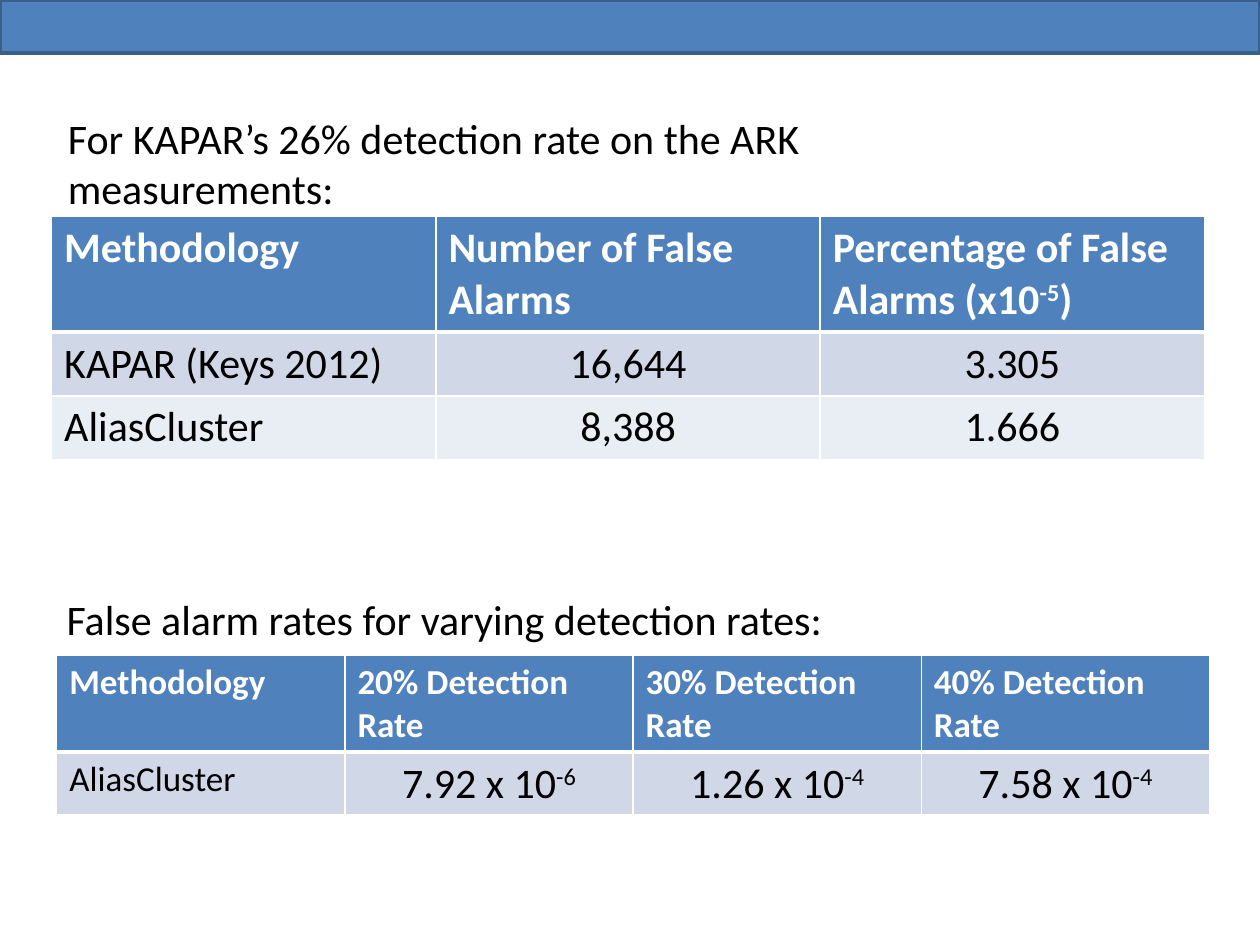
from lxml.etree import SubElement
from pptx import Presentation
from pptx.dml.color import RGBColor
from pptx.enum.shapes import MSO_SHAPE
from pptx.enum.text import PP_ALIGN
from pptx.oxml.ns import qn
from pptx.util import Inches, Pt

BLUE, EDGE, WHITE, BLACK = "4F81BD", "3A5F8C", "FFFFFF", "000000"
BANDS = ("D0D8E8", "E9EDF4")


def color(value):
    return RGBColor.from_string(value)


def fill_solid(fill, value):
    fill.solid()
    fill.fore_color.rgb = color(value)


def write(p, text, size, value=BLACK, bold=False):
    """Write text into a paragraph; parts between ^ marks are superscript."""
    fmt = {"name": "Calibri", "size": Pt(size), "bold": bold}
    for i, part in enumerate(text.split("^")):
        r = p.add_run()
        r.text = part
        for key, val in fmt.items():
            setattr(r.font, key, val)
        r.font.color.rgb = color(value)
        if i % 2:
            r.font._element.set("baseline", "30000")


def set_borders(cell, top, bottom):
    tcPr = cell._tc.get_or_add_tcPr()
    widths = {"a:lnL": 1, "a:lnR": 1, "a:lnT": top, "a:lnB": bottom}
    for i, (tag, width) in enumerate(widths.items()):
        ln = SubElement(tcPr, qn(tag), w=str(Pt(width)))
        solid = SubElement(ln, qn("a:solidFill"))
        SubElement(solid, qn("a:srgbClr"), val=WHITE)
        tcPr.insert(i, ln)  # borders come before the fill


def add_banner(slide):
    sp = slide.shapes.add_shape(MSO_SHAPE.RECTANGLE, 0, 0, Inches(10), Inches(0.42))
    sp.shadow.inherit = False
    fill_solid(sp.fill, BLUE)
    sp.line.color.rgb = color(EDGE)
    sp.line.width = Pt(2)


def add_caption(slide, text, left, top, height):
    box = slide.shapes.add_textbox(Inches(left), Inches(top), Inches(7.13), Inches(height))
    tf = box.text_frame
    tf.word_wrap = True
    write(tf.paragraphs[0], text, 24)


def add_results(slide, rows, left, top, row_heights, label_size):
    """Table with a blue header; the first column holds the labels."""
    table = slide.shapes.add_table(
        len(rows), len(rows[0]), Inches(left), Inches(top),
        Inches(9.15), Inches(sum(row_heights))).table
    for i, values in enumerate(rows):
        table.rows[i].height = Inches(row_heights[i])
        header = i == 0
        for j, text in enumerate(values):
            cell = table.cell(i, j)
            p = cell.text_frame.paragraphs[0]
            if header:
                write(p, text, label_size, WHITE, True)
            else:
                write(p, text, 24 if j else label_size)
                p.alignment = PP_ALIGN.CENTER if j else PP_ALIGN.LEFT
            fill_solid(cell.fill, BLUE if header else BANDS[(i - 1) % 2])
            set_borders(cell, top=3 if i == 1 else 1, bottom=3 if header else 1)


def main():
    prs = Presentation()
    prs.slide_width, prs.slide_height = Inches(10), Inches(7.5)
    slide = prs.slides.add_slide(prs.slide_layouts[6])
    add_banner(slide)

    # False alarms at a fixed detection rate
    add_results(slide, [
        ("Methodology", "Number of False Alarms", "Percentage of False Alarms (x10^-5^)"),
        ("KAPAR (Keys 2012)", "16,644", "3.305"),
        ("AliasCluster", "8,388", "1.666"),
    ], 0.41, 1.72, (0.9, 0.5, 0.5), 24)
    add_caption(slide, "For KAPAR’s 26% detection rate on the ARK measurements:",
                0.44, 0.84, 0.91)

    # False alarms as the detection rate varies
    add_results(slide, [
        ("Methodology", *(f"{rate}% Detection Rate" for rate in (20, 30, 40))),
        ("AliasCluster", "7.92 x 10^-6", "1.26 x 10^-4", "7.58 x 10^-4"),
    ], 0.45, 5.2, (0.77, 0.5), 20)
    add_caption(slide, "False alarm rates for varying detection rates:", 0.43, 4.66, 0.5)

    prs.save("out.pptx")


if __name__ == "__main__":
    main()
